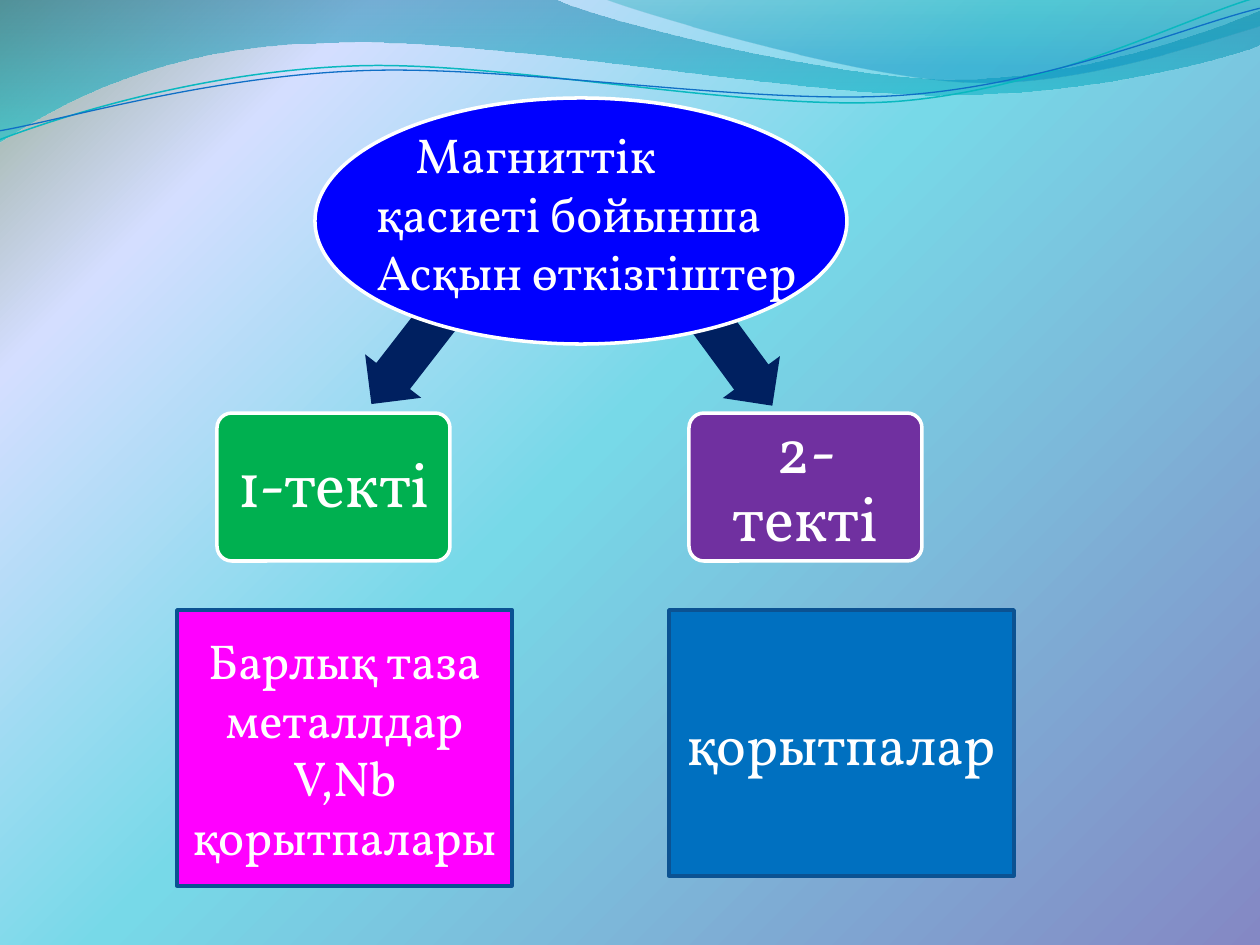
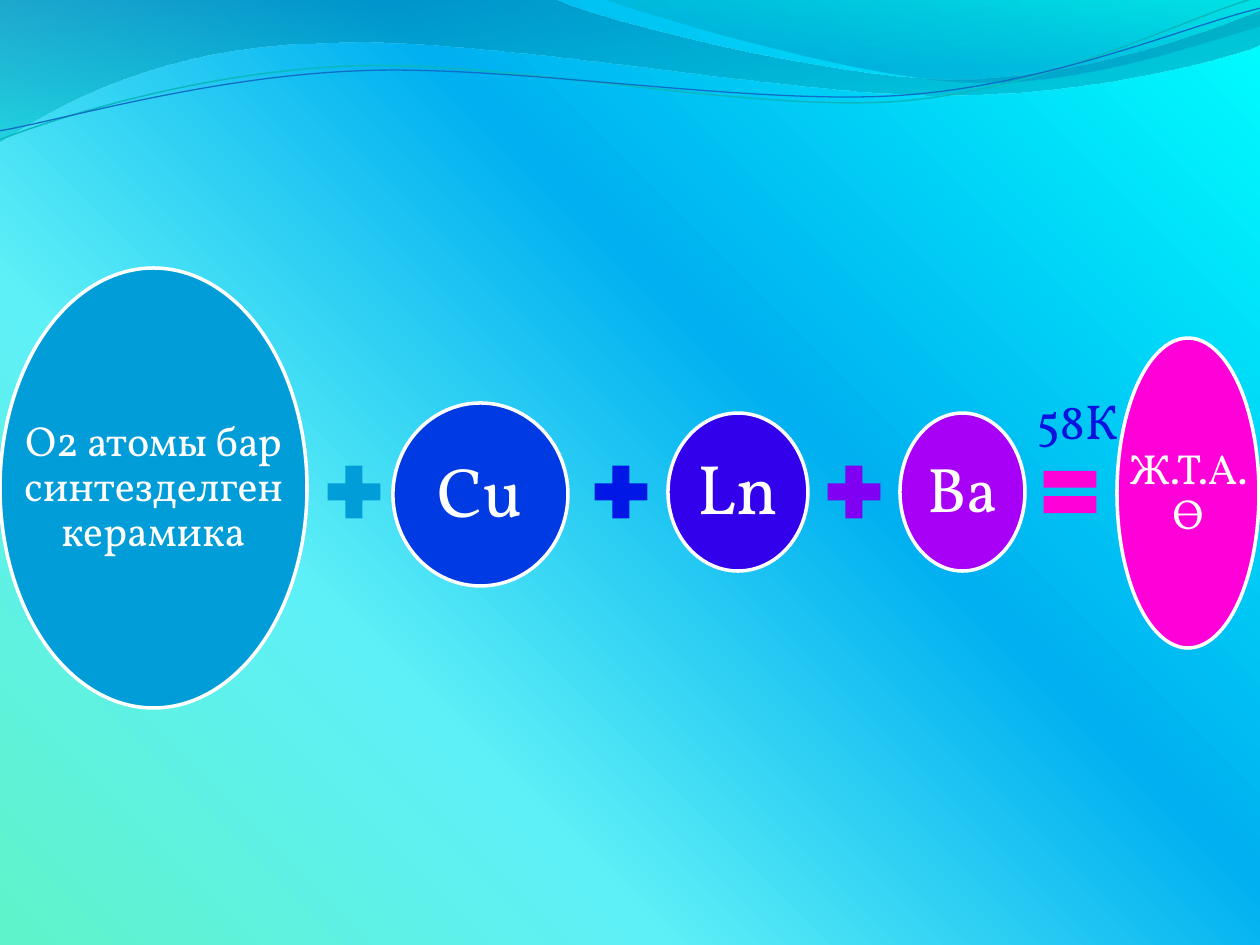
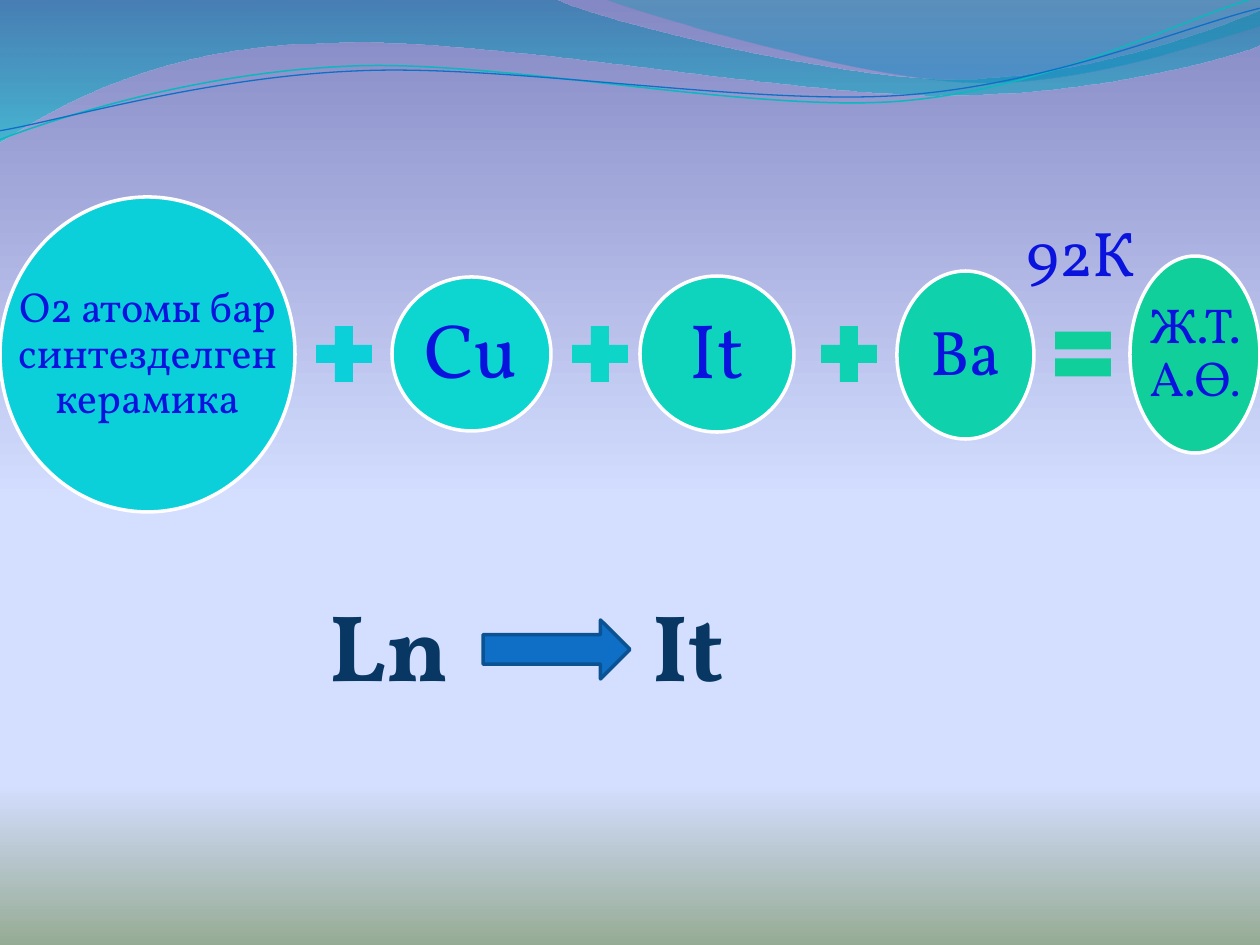
"""Three slides on superconductors: two magnetic kinds and two ceramic formulas."""
from lxml.etree import SubElement
from pptx import Presentation
from pptx.dml.color import RGBColor
from pptx.enum.shapes import MSO_SHAPE as Kind
from pptx.enum.text import MSO_ANCHOR as Anchor, PP_ALIGN as Align
from pptx.oxml.ns import qn
from pptx.util import Pt

PX = 914400 / 126
WIDTH, HEIGHT = 1260, 945
FONT = "Vollkorn"
RIPPLE_ANGLE = 357.3

COLORS = {
    "white": "FFFFFF", "ink": "0913DD", "navy": "083763", "arrow": "002060",
    "outline": "0B5292", "accent": "0F6FC6", "teal": "0AB8BF",
    "oval": "0000FF", "green": "00B050", "purple": "7030A0",
    "magenta": "FF00FF", "blue": "0070C0",
    "wave sea": "0074A1", "wave aqua": "00C6CF", "crest teal": "00A1A9", "crest blue": "008BBF",
    "violet": "8488C4", "sky": "77D9E8", "lavender": "D4DEFF", "sage": "96AB94",
    "cyan": "00FFFF", "azure": "00B0F0", "ice": "5EF0F7", "mint": "5FF3CA",
    "ceramic 58": "009DD9", "Cu 58": "003AE3", "plus 58": "0017E6", "Ln 58": "3300EC",
    "plus Ba 58": "8000F3", "Ba 58": "A800F6", "result 58": "FF01D8",
    "ceramic 92": "0BD0D9", "Cu 92": "0CD6CF", "plus 92": "0DD6C9", "It 92": "0ED4BD",
    "plus Ba 92": "0ED2B2", "Ba 92": "0FD1AC", "result 92": "10CF9B",
}

BACKGROUNDS = [
    ([("violet", 0), ("sky", 53), ("lavender", 83), ("sage", 100)], {"l": 100, "t": 100}),
    ([("cyan", 0), ("azure", 40), ("ice", 70), ("mint", 100)], {"l": 100, "b": 100}),
    ([("violet", 0), ("lavender", 53), ("lavender", 83), ("sage", 100)], None),
]

WAVES = [
    ([(0, 0), (554, -1), (600, 21, 837, 79, 955, 79), (1075, 79, 1207, 33, 1260, 11),
      (1261, 45), (1239, 55, 1096, 96, 940, 95), (784, 95, 481, 35, 324, 43),
      (163, 45, 58, 105, -1, 142)],
     [("wave sea", 0, 45), ("wave aqua", 100, 55)]),
    ([(604, -1), (641, 14, 859, 78, 969, 82), (1079, 87, 1211, 40, 1260, 26), (1260, 0)],
     [("crest teal", 0, 30), ("crest blue", 80, 45)]),
]
RIPPLES = [
    ([(-3, 110), (58, 90, 199, 52, 350, 53), (499, 53, 745, 118, 896, 114),
      (1049, 109, 1184, 45, 1260, 27)], "teal", 0.85),
    ([(-2, 101), (57, 94, 207, 57, 357, 58), (509, 58, 750, 112, 902, 108),
      (1052, 104, 1188, 52, 1262, 38)], "accent", 0.75),
]

HEADING = "Магниттік қасиеті бойынша Асқын өткізгіштер"
BRANCH_ARROWS = [(606, 233.7), (331, 307.8)]
KINDS = [("1-текті", 217, "green"), ("2-текті", 689, "purple")]
EXAMPLES = [
    (["Барлық таза металлдар", "V,Nb қорытпалары"], 28, (177, 610, 335, 276), "magenta"),
    (["қорытпалар"], 32, (669, 610, 345, 266), "blue"),
]

FORMULA_58 = {
    "terms": [
        ("О2 атомы бар синтезделген керамика", 24, (0, 268, 307, 440), "ceramic 58"),
        ("Сu", 40, (393, 403, 175, 183), "Cu 58"),
        ("Ln", 40, (668, 413, 140, 158), "Ln 58"),
        ("Ba", 36, (900, 413, 125, 158), "Ba 58"),
        ("Ж.Т.А.Ө", 24, (1117, 338, 142, 310), "result 58"),
    ],
    "signs": [(318, "ceramic 58"), (585, "plus 58"), (818, "plus Ba 58"), (1034, "result 58")],
    "sign_size": 72, "axis": 492, "ink": "white",
}
FORMULA_92 = {
    "terms": [
        ("O2 атомы бар синтезделген керамика", 24, (0, 197, 295, 315), "ceramic 92"),
        ("Cu", 44, (392, 277, 159, 154), "Cu 92"),
        ("It", 44, (640, 276, 154, 156), "It 92"),
        ("Ba", 36, (897, 271, 137, 168), "Ba 92"),
        ("Ж.Т.А.Ө", 28, (1130, 256, 130, 197), "result 92", (".", 24)),
    ],
    "signs": [(306, "ceramic 92"), (562, "plus 92"), (811, "plus Ba 92"), (1045, "result 92")],
    "sign_size": 76, "axis": 354, "ink": "ink",
}
REPLACEMENT = [("Ln", (276, 581, 227, 127)), ("It", (640, 581, 97, 127))]


def emu(px):
    return round(px * PX)


def rgb(color):
    return RGBColor.from_string(COLORS[color])


def paint_gradient(fill, owner, stops, corner=None):
    """Fill with (colour, position, opacity) stops, downwards or out of a corner."""
    fill.gradient()
    gradient = owner.find(".//" + qn("a:gradFill"))
    for child in list(gradient):
        gradient.remove(child)
    stop_list = SubElement(gradient, qn("a:gsLst"))
    for color, position, *opacity in stops:
        stop = SubElement(stop_list, qn("a:gs"), pos=str(position * 1000))
        value = SubElement(stop, qn("a:srgbClr"), val=COLORS[color])
        for percent in opacity:
            SubElement(value, qn("a:alpha"), val=str(percent * 1000))
    if corner:
        path = SubElement(gradient, qn("a:path"), path="circle")
        sides = {side: str(percent * 1000) for side, percent in corner.items()}
        SubElement(path, qn("a:fillToRect"), **sides)
    else:
        SubElement(gradient, qn("a:lin"), ang="5400000", scaled="0")


def add_curve(slide, segments, closed):
    """Draw a freeform whose six-number segments are Bézier curves."""
    (x, y), *rest = segments
    builder = slide.shapes.build_freeform(emu(x), emu(y))
    builder.add_line_segments([tuple(map(emu, segment[-2:])) for segment in rest], close=closed)
    curve = builder.convert_to_shape()
    curve.shadow.inherit = False
    outline = curve.element.find(".//" + qn("a:path"))
    for segment, straight in zip(rest, outline.findall(qn("a:lnTo"))):
        if len(segment) == 6:
            bend = SubElement(outline, qn("a:cubicBezTo"))
            for x, y in zip(segment[::2], segment[1::2]):
                SubElement(bend, qn("a:pt"), x=str(emu(x) - curve.left), y=str(emu(y) - curve.top))
            outline.replace(straight, bend)
    return curve


def add_waves(slide, layout):
    """Draw the wavy band and hand it over to the shared layout."""
    for placeholder in list(layout.placeholders):
        placeholder.element.getparent().remove(placeholder.element)
    curves = []
    for segments, stops in WAVES:
        wave = add_curve(slide, segments, True)
        paint_gradient(wave.fill, wave.element, stops)
        wave.line.fill.background()
        curves.append(wave)
    for segments, color, weight in RIPPLES:
        ripple = add_curve(slide, segments, False)
        ripple.rotation = RIPPLE_ANGLE
        ripple.fill.background()
        ripple.line.color.rgb = rgb(color)
        ripple.line.width = Pt(weight)
        curves.append(ripple)
    for curve in curves:
        layout.element.cSld.spTree.append(curve.element)


def add_figure(slide, kind, box, color, outline=None):
    figure = slide.shapes.add_shape(kind, *map(emu, box))
    figure.shadow.inherit = False
    figure.fill.solid()
    figure.fill.fore_color.rgb = rgb(color)
    if outline:
        figure.line.color.rgb = rgb(outline)
        figure.line.width = Pt(2)
    else:
        figure.line.fill.background()
    return figure


def style_run(run, size, color, bold=False):
    run.font.name = FONT
    run.font.size = Pt(size)
    run.font.bold = bold
    run.font.color.rgb = rgb(color)


def write(frame, text, size, color="white", align=Align.CENTER, anchor=Anchor.MIDDLE,
          inset=None, spacing=None, bold=False):
    frame.text = text
    frame.word_wrap = True
    frame.vertical_anchor = anchor
    if inset is not None:
        frame.margin_left = frame.margin_right = emu(inset)
        frame.margin_top = frame.margin_bottom = emu(inset)
    for paragraph in frame.paragraphs:
        paragraph.alignment = align
        paragraph.line_spacing = spacing
        for run in paragraph.runs:
            style_run(run, size, color, bold)


def add_label(slide, text, size, box, color, **style):
    frame = slide.shapes.add_textbox(*map(emu, box)).text_frame
    write(frame, text, size, color, **style)
    return frame


def build_kinds(slide):
    for left, angle in BRANCH_ARROWS:
        arrow = add_figure(slide, Kind.LEFT_ARROW, (left, 286, 209, 71), "arrow")
        arrow.adjustments[0] = 0.6
        arrow.rotation = angle
    for text, left, color in KINDS:
        card = add_figure(slide, Kind.ROUNDED_RECTANGLE, (left, 413, 233, 148), color, "white")
        card.adjustments[0] = 0.1
        write(card.text_frame, text, 36, inset=11, spacing=0.9)
    add_figure(slide, Kind.OVAL, (315, 98, 532, 246), "oval", "white")
    heading = add_label(slide, HEADING, 28, (364, 118, 452, 190), "white",
                        align=Align.LEFT, anchor=Anchor.TOP)
    heading.paragraphs[0]._p.get_or_add_pPr().set("indent", str(emu(39)))
    for lines, size, box, color in EXAMPLES:
        example = add_figure(slide, Kind.RECTANGLE, box, color, "outline")
        write(example.text_frame, "\n".join(lines), size)


def build_formula(slide, formula):
    ink = formula["ink"]
    for text, size, box, color, *endings in formula["terms"]:
        add_figure(slide, Kind.OVAL, box, color, "white")
        label = add_label(slide, text, size, box, ink, inset=5, spacing=0.9)
        for ending, ending_size in endings:
            run = label.paragraphs[0].add_run()
            run.text = ending
            style_run(run, ending_size, ink)
    side = formula["sign_size"]
    last = len(formula["signs"]) - 1
    for index, (left, color) in enumerate(formula["signs"]):
        sign = Kind.MATH_EQUAL if index == last else Kind.MATH_PLUS
        add_figure(slide, sign, (left, formula["axis"] - side / 2, side, side), color)


def main():
    prs = Presentation()
    prs.slide_width, prs.slide_height = emu(WIDTH), emu(HEIGHT)
    layout = prs.slide_layouts[6]
    slides = [prs.slides.add_slide(layout) for _ in BACKGROUNDS]
    add_waves(slides[0], layout)
    for slide, (stops, corner) in zip(slides, BACKGROUNDS):
        paint_gradient(slide.background.fill, slide.element, stops, corner)
    kinds, ceramic_58, ceramic_92 = slides

    build_kinds(kinds)

    build_formula(ceramic_58, FORMULA_58)
    add_label(ceramic_58, "58К", 28, (1024, 384, 108, 72), "ink",
              align=Align.LEFT, anchor=Anchor.TOP)

    build_formula(ceramic_92, FORMULA_92)
    add_label(ceramic_92, "92К", 36, (1014, 207, 186, 89), "ink",
              align=Align.LEFT, anchor=Anchor.TOP)
    add_figure(ceramic_92, Kind.RIGHT_ARROW, (483, 620, 147, 59), "accent", "outline")
    for text, box in REPLACEMENT:
        add_label(ceramic_92, text, 54, box, "navy", anchor=Anchor.TOP, bold=True)

    prs.save("out.pptx")


if __name__ == "__main__":
    main()
